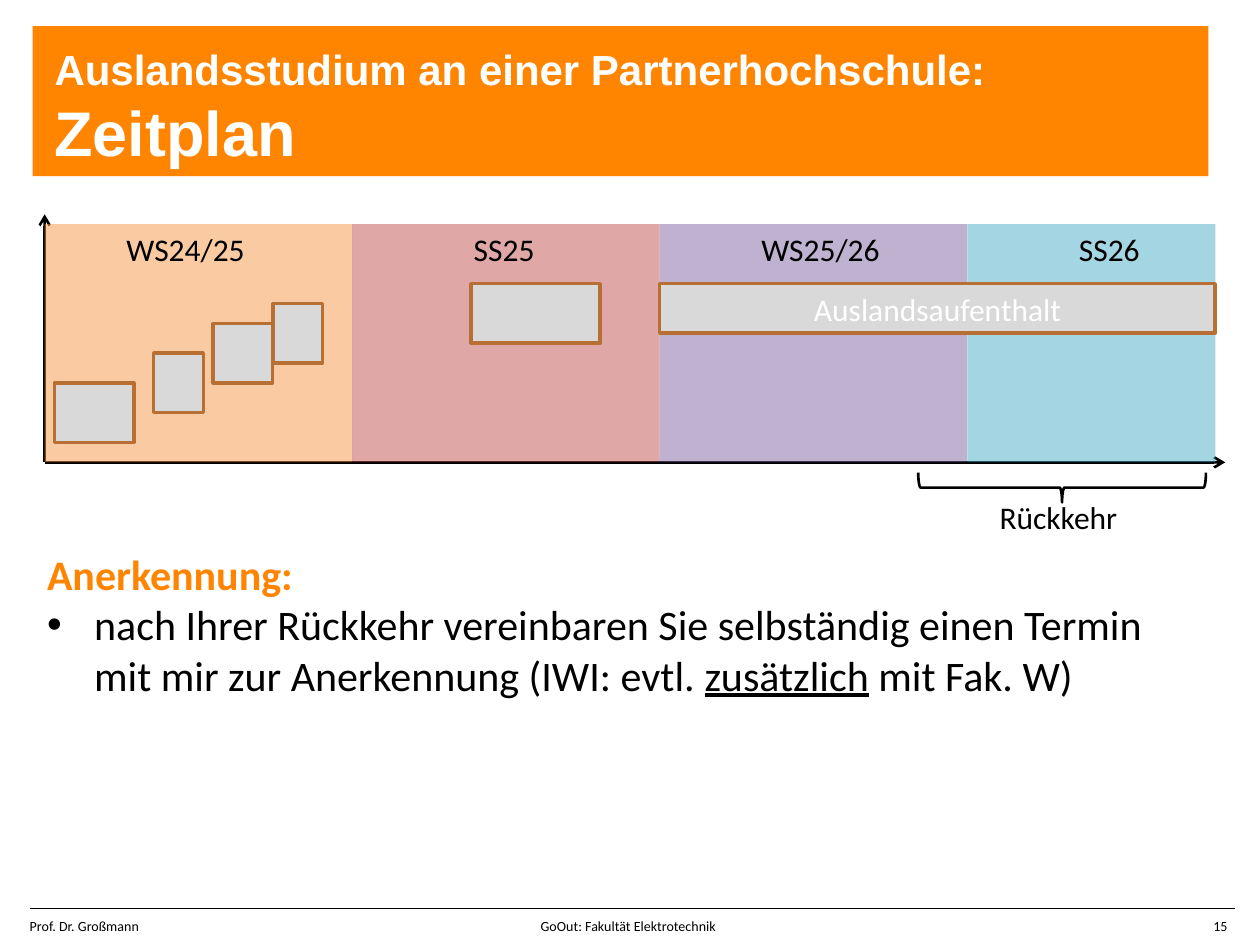
from lxml import etree
from pptx import Presentation
from pptx.dml.color import RGBColor
from pptx.enum.shapes import MSO_CONNECTOR, MSO_SHAPE
from pptx.enum.text import MSO_ANCHOR, PP_ALIGN
from pptx.oxml.ns import qn
from pptx.util import Cm, Pt

RECTANGLE, BRACE = MSO_SHAPE.RECTANGLE, MSO_SHAPE.RIGHT_BRACE
STRAIGHT = MSO_CONNECTOR.STRAIGHT
MIDDLE, TOP = MSO_ANCHOR.MIDDLE, MSO_ANCHOR.TOP
CENTER, LEFT = PP_ALIGN.CENTER, PP_ALIGN.LEFT

# Content: each span is (text, style)
TITLE = [[("Auslandsstudium an einer Partnerhochschule: ", "subtitle"),
          ("Zeitplan", "title")]]
SEMESTERS = [  # name, colour, width, label left (cm)
    ("WS24/25", "F79646", 6.2, 2.3),
    ("SS25", "C0504D", 6.2, 9.3),
    ("WS25/26", "8064A2", 6.2, 15.1),
    ("SS26", "4BACC6", 5.0, 21.5),
]
STEPS = [  # left, drop below chart top, width (cm)
    (1.1, 3.2, 1.6), (3.1, 2.6, 1.0), (4.3, 2.0, 1.2),
    (5.5, 1.6, 1.0), (9.5, 1.2, 2.6),
]
STAY = "Auslandsaufenthalt"
RETURN = "Rückkehr"
RECOGNITION = [
    [("Anerkennung:", "heading")],
    [("nach Ihrer Rückkehr vereinbaren Sie selbständig einen Termin "
      "mit mir zur Anerkennung (IWI: evtl. ", "body"),
     ("zusätzlich", "underlined"), (" mit Fak. W)", "body")],
]
FOOTER = "Prof. Dr. Großmann\tGoOut: Fakultät Elektrotechnik\t15"

THEME = {
    "orange": "FF8500", "black": "000000", "step": "D9D9D9", "edge": "B76F34",
    # font, size, colour, bold, underline
    "subtitle": ("Arial", 24, "FFFFFF", True, False),
    "title": ("Arial", 36, "FFFFFF", True, False),
    "label": ("Calibri", 18, "000000", False, False),
    "stay": ("Calibri", 18, "FFFFFF", False, False),
    "heading": ("Calibri", 24, "FF8500", True, False),
    "body": ("Calibri", 24, "000000", False, False),
    "underlined": ("Calibri", 24, "000000", False, True),
    "footer": ("Calibri", 8, "000000", False, False),
}

# Timeline geometry (cm)
CHART_LEFT, CHART_TOP, CHART_HEIGHT = 0.9, 4.52, 4.8
CHART_BOTTOM = CHART_TOP + CHART_HEIGHT
AXIS_OVERHANG = 0.2
STEP_HEIGHT, LABEL_WIDTH, LABEL_HEIGHT = 1.2, 3.4, 1.02


def place(*lengths):
    return [Cm(round(length, 2)) for length in lengths]


def add_element(parent, tag, **attributes):
    element = etree.SubElement(parent, qn(tag))
    for name, value in attributes.items():
        element.set(name, str(value))
    return element


def write(shape, paragraphs, align=LEFT, anchor=TOP, margin=None):
    frame = shape.text_frame
    frame.word_wrap = True
    frame.vertical_anchor = anchor
    if margin is not None:
        frame.margin_left = frame.margin_right = Cm(margin)
        frame.margin_top = frame.margin_bottom = Cm(margin)
    for index, spans in enumerate(paragraphs):
        para = frame.add_paragraph() if index else frame.paragraphs[0]
        para.alignment = align
        for text, style in spans:
            span = para.add_run()
            span.text = text
            font = span.font
            font.name, size, color, font.bold, font.underline = THEME[style]
            font.size = Pt(size)
            font.color.rgb = RGBColor.from_string(color)
    return frame


def add_text(page, box, paragraphs, **options):
    return write(page.shapes.add_textbox(*place(*box)), paragraphs, **options)


def add_box(page, box, fill=None, line=None, width=2, kind=RECTANGLE):
    shape = page.shapes.add_shape(kind, *place(*box))
    shape.shadow.inherit = False
    if fill:
        shape.fill.solid()
        shape.fill.fore_color.rgb = RGBColor.from_string(fill)
    else:
        shape.fill.background()
    if line:
        shape.line.color.rgb = RGBColor.from_string(line)
        shape.line.width = Pt(width)
    else:
        shape.line.fill.background()
    return shape


def add_line(page, start, end, width, arrow=False):
    line = page.shapes.add_connector(STRAIGHT, *place(*start, *end))
    line.line.color.rgb = RGBColor.from_string(THEME["black"])
    line.line.width = Pt(width)
    if arrow:
        add_element(line.line._get_or_add_ln(), "a:tailEnd", type="arrow")
    add_element(line._element.spPr, "a:effectLst")


def add_header_and_footer(page):
    add_box(page, (0.66, 0.53, 23.7, 3.02), THEME["orange"])
    add_text(page, (1.1, 0.76, 19.6, 2.77), TITLE, anchor=MIDDLE, margin=0)
    add_line(page, (0.6, 18.31), (24.9, 18.31), 0.75)
    frame = add_text(page, (0.6, 18.49, 24.4, 0.33), [[(FOOTER, "footer")]], margin=0)
    tabs = add_element(frame.paragraphs[0]._p.get_or_add_pPr(), "a:tabLst")
    for position, align in ((10.3, "l"), (24.15, "r")):
        add_element(tabs, "a:tab", pos=Cm(position), algn=align)


def add_timeline(page):
    chart_right = CHART_LEFT + sum(width for _, _, width, _ in SEMESTERS)
    origin = (CHART_LEFT, CHART_BOTTOM)
    for tip in ((CHART_LEFT, CHART_TOP - AXIS_OVERHANG),
                (chart_right + AXIS_OVERHANG, CHART_BOTTOM)):
        add_line(page, origin, tip, 1.5, arrow=True)

    # Half-transparent semester bands
    left = CHART_LEFT
    starts = {}
    for name, color, width, _ in SEMESTERS:
        band = add_box(page, (left, CHART_TOP, width, CHART_HEIGHT), color)
        rgb = band._element.spPr.find(qn("a:solidFill"))[0]
        add_element(rgb, "a:alpha", val=50000)
        starts[name] = left
        left += width

    # Stay abroad and the steps before it
    stay_left = starts["WS25/26"]
    stay = add_box(page, (stay_left, CHART_TOP + 1.2, chart_right - stay_left, 1),
                   THEME["step"], THEME["edge"])
    write(stay, [[(STAY, "stay")]], align=CENTER, anchor=MIDDLE)
    for left, drop, width in STEPS:
        add_box(page, (left, CHART_TOP + drop, width, STEP_HEIGHT),
                THEME["step"], THEME["edge"])

    # Return period
    brace = add_box(page, (21.11, 6.93, 0.6, 5.8), None, THEME["black"], 1.5, BRACE)
    brace.rotation = 90
    add_text(page, (19.9, 9.92, 4.2, LABEL_HEIGHT), [[(RETURN, "label")]])

    for name, _, _, left in SEMESTERS:
        add_text(page, (left, CHART_TOP, LABEL_WIDTH, LABEL_HEIGHT), [[(name, "label")]])


def add_recognition(page):
    frame = add_text(page, (0.7, 10.93, 23.4, 6.76), RECOGNITION)
    properties = frame.paragraphs[1]._p.get_or_add_pPr()
    properties.set("marL", str(Cm(0.95)))
    properties.set("indent", str(-Cm(0.95)))
    add_element(properties, "a:buFont", typeface="Arial")
    add_element(properties, "a:buChar", char="•")


def main():
    deck = Presentation()
    deck.slide_width, deck.slide_height = Cm(25.4), Cm(19.05)
    page = deck.slides.add_slide(deck.slide_layouts[6])
    add_header_and_footer(page)
    add_timeline(page)
    add_recognition(page)
    deck.save("out.pptx")


if __name__ == "__main__":
    main()
